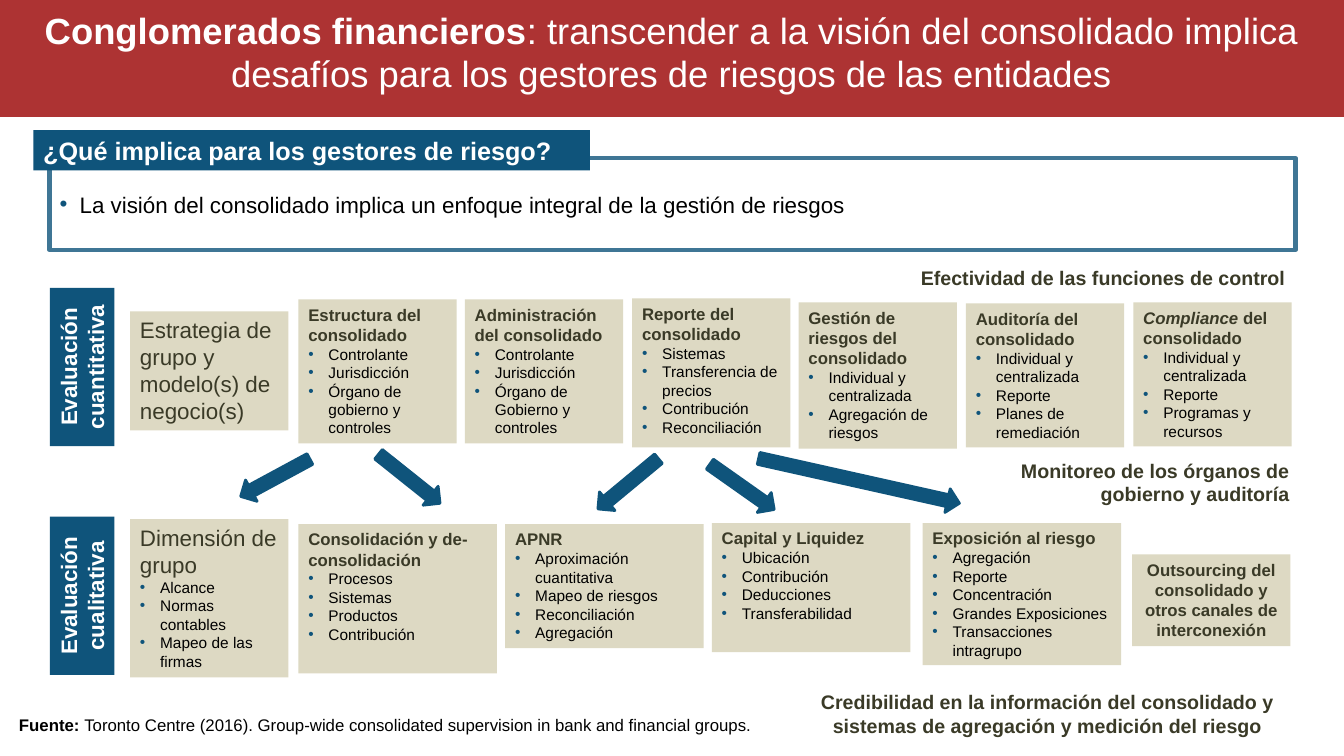
from dataclasses import dataclass

from lxml.etree import SubElement
from pptx import Presentation
from pptx.dml.color import RGBColor
from pptx.enum.shapes import MSO_SHAPE
from pptx.enum.text import MSO_ANCHOR, MSO_AUTO_SIZE, PP_ALIGN
from pptx.oxml.ns import qn
from pptx.util import Emu, Pt


@dataclass(frozen=True)
class Theme:
    """Colours, font and type sizes of the slide."""
    font: str = "Arial"
    red: str = "AD3333"
    blue: str = "0F547B"
    frame: str = "3F7695"
    sand: str = "DDD9C3"
    olive: str = "3A3A27"
    black: str = "000000"
    white: str = "FFFFFF"
    title: int = 26
    section: int = 18
    lead: int = 16
    note: int = 14
    heading: int = 12
    bullet: int = 11


THEME = Theme()
EMU_PER_PX = 9144
CARD_WIDTH = 157
WIDE_CARD_WIDTH = 197
BULLET_INDENT = 20

ARROWS = [
    ((261, 435, 24, 78), 61.6),
    ((394, 436, 24, 78), 308.6),
    ((611, 441, 24, 78), 50.3),
    ((724, 444, 24, 78), 305.2),
    ((840, 375, 24, 204), 282.6),
]
QUANTITATIVE_CARDS = [
    (297, 143, [("Estructura del consolidado", False)],
     ["Controlante", "Jurisdicción", "Órgano de gobierno y controles"]),
    (297, 143, [("Administración del consolidado", False)],
     ["Controlante", "Jurisdicción", "Órgano de Gobierno y controles"]),
    (296, 148, [("Reporte del consolidado", False)],
     ["Sistemas", "Transferencia de precios", "Contribución", "Reconciliación"]),
    (300, 145, [("Gestión de riesgos del consolidado", False)],
     ["Individual y centralizada", "Agregación de riesgos"]),
    (301, 143, [("Auditoría del consolidado", False)],
     ["Individual y centralizada", "Reporte", "Planes de remediación"]),
    (300, 143, [("Compliance", True), (" del consolidado", False)],
     ["Individual y centralizada", "Reporte", "Programas y recursos"]),
]
QUALITATIVE_CARDS = [
    (296, 520, 148, "Consolidación y de-consolidación",
     ["Procesos", "Sistemas", "Productos", "Contribución"]),
    (501, 520, 123, "APNR",
     ["Aproximación cuantitativa", "Mapeo de riesgos", "Reconciliación", "Agregación"]),
    (706, 519, 128, "Capital y Liquidez",
     ["Ubicación", "Contribución", "Deducciones", "Transferabilidad"]),
    (915, 519, 141, "Exposición al riesgo",
     ["Agregación", "Reporte", "Concentración", "Grandes Exposiciones",
      "Transacciones intragrupo"]),
]


def px(length):
    """Turn a length in px into EMU."""
    return Emu(length * EMU_PER_PX)


def color(value):
    """Turn a hexadecimal string into a colour."""
    return RGBColor.from_string(value)


def move(shape, box):
    """Place a shape in a box of left, top, width and height."""
    shape.left, shape.top, shape.width, shape.height = map(px, box)


def write(paragraph, text, size, ink, bold=False, italic=False):
    """Add one formatted run to a paragraph."""
    run = paragraph.add_run()
    run.text = text
    font = run.font
    font.name, font.size, font.bold, font.italic = THEME.font, Pt(size), bold, italic
    font.color.rgb = color(ink)


def write_bullet(paragraph, text, size):
    """Make a paragraph a bulleted line of text."""
    properties = paragraph._p.get_or_add_pPr()
    properties.set("marL", str(px(BULLET_INDENT)))
    properties.set("indent", str(-px(BULLET_INDENT)))
    bullet_color = SubElement(properties, qn("a:buClr"))
    SubElement(bullet_color, qn("a:srgbClr"), val=THEME.blue)
    SubElement(properties, qn("a:buFont"), typeface=THEME.font)
    SubElement(properties, qn("a:buChar"), char="•")
    paragraph.space_before = Pt(0)
    write(paragraph, text, size, THEME.black)


def setup_frame(shape, anchor=MSO_ANCHOR.TOP, alignment=PP_ALIGN.LEFT):
    """Prepare the text frame of a shape and return its first paragraph."""
    frame = shape.text_frame
    frame.word_wrap = True
    frame.auto_size = MSO_AUTO_SIZE.NONE
    frame.vertical_anchor = anchor
    paragraph = frame.paragraphs[0]
    paragraph.alignment = alignment
    return paragraph


def add_filled(slide, kind, box, fill):
    """Add a filled shape without outline or shadow."""
    shape = slide.shapes.add_shape(kind, *map(px, box))
    shape.shadow.inherit = False
    shape.fill.solid()
    shape.fill.fore_color.rgb = color(fill)
    shape.line.fill.background()
    return shape


def add_block(slide, box, fill, text, size, ink, bold=True, alignment=PP_ALIGN.LEFT):
    """Add a filled rectangle with one paragraph of text."""
    block = add_filled(slide, MSO_SHAPE.RECTANGLE, box, fill)
    write(setup_frame(block, alignment=alignment), text, size, ink, bold)
    return block


def add_card(slide, box, heading, bullets, size=THEME.heading, bold=True):
    """Add a sand card with a heading and a bulleted list."""
    card = add_filled(slide, MSO_SHAPE.RECTANGLE, box, THEME.sand)
    paragraph = setup_frame(card)
    for text, italic in heading:
        write(paragraph, text, size, THEME.olive, bold, italic)
    for text in bullets:
        paragraph = card.text_frame.add_paragraph()
        paragraph.alignment = PP_ALIGN.LEFT
        write_bullet(paragraph, text, THEME.bullet)


def add_note(slide, box, runs, size, ink, alignment):
    """Add a free text box made of runs."""
    note = slide.shapes.add_textbox(*map(px, box))
    paragraph = setup_frame(note, alignment=alignment)
    for text, bold in runs:
        write(paragraph, text, size, ink, bold)


def fill_title(slide, box):
    """Fill the title placeholder as a red band."""
    title = slide.shapes.title
    move(title, box)
    title.fill.solid()
    title.fill.fore_color.rgb = color(THEME.red)
    paragraph = setup_frame(title, MSO_ANCHOR.MIDDLE, PP_ALIGN.CENTER)
    title.text_frame.margin_bottom = px(19)
    write(paragraph, "Conglomerados financieros", THEME.title, THEME.white, True)
    write(paragraph, ": transcender a la visión del consolidado implica desafíos para "
          "los gestores de riesgos de las entidades", THEME.title, THEME.white)


def fill_question(slide, box):
    """Fill the body placeholder as a framed list with its header."""
    left, top, _, _ = box
    body = slide.placeholders[1]
    move(body, box)
    body.line.color.rgb = color(THEME.frame)
    body.line.width = Pt(3)
    write_bullet(setup_frame(body, MSO_ANCHOR.MIDDLE),
                 "La visión del consolidado implica un enfoque integral de la gestión de riesgos",
                 THEME.lead)
    add_block(slide, (left - 16, top - 28, 552, 40), THEME.blue,
              "¿Qué implica para los gestores de riesgo?", THEME.section, THEME.white)


def add_row_label(slide, box, text):
    """Add a blue row label that reads upwards."""
    label = add_block(slide, box, THEME.blue, text, THEME.lead, THEME.white,
                      alignment=PP_ALIGN.CENTER)
    label.rotation = 270


def add_arrows(slide):
    """Add the arrows that lead from the upper row to the lower one."""
    for box, angle in ARROWS:
        arrow = add_filled(slide, MSO_SHAPE.DOWN_ARROW, box, THEME.blue)
        arrow.line.color.rgb = color(THEME.blue)
        arrow.line.width = Pt(2)
        arrow.rotation = angle


def add_quantitative_row(slide, left, top):
    """Add the label and cards of the quantitative row."""
    add_row_label(slide, (left - 126, top + 23, CARD_WIDTH, 64), "Evaluación cuantitativa")
    add_block(slide, (left, top, CARD_WIDTH, 118), THEME.sand,
              "Estrategia de grupo y modelo(s) de negocio(s)", THEME.lead, THEME.olive, False)
    for index, (card_top, height, heading, bullets) in enumerate(QUANTITATIVE_CARDS):
        card_left = left + 167 + index * 828 // 5
        add_card(slide, (card_left, card_top, CARD_WIDTH, height), heading, bullets)


def add_qualitative_row(slide, left, top):
    """Add the label and cards of the qualitative row."""
    add_row_label(slide, (left - 126, top + 44, CARD_WIDTH, 64), "Evaluación cualitativa")
    add_card(slide, (left, top, CARD_WIDTH, 157), [("Dimensión de grupo", False)],
             ["Alcance", "Normas contables", "Mapeo de las firmas"], THEME.lead, False)
    for card_left, card_top, height, heading, bullets in QUALITATIVE_CARDS:
        add_card(slide, (card_left, card_top, WIDE_CARD_WIDTH, height),
                 [(heading, False)], bullets)
    add_block(slide, (left + 994, top + 35, CARD_WIDTH, 91), THEME.sand,
              "Outsourcing del consolidado y otros canales de interconexión",
              THEME.heading, THEME.olive, alignment=PP_ALIGN.CENTER)


def add_notes(slide):
    """Add the free remarks and the source line."""
    remarks = [
        ((690, 259, 595, 34), "Efectividad de las funciones de control", PP_ALIGN.RIGHT),
        ((952, 450, 337, 57), "Monitoreo de los órganos de gobierno y auditoría",
         PP_ALIGN.RIGHT),
        ((797, 680, 484, 57), "Credibilidad en la información del consolidado y sistemas "
         "de agregación y medición del riesgo", PP_ALIGN.CENTER),
    ]
    for box, text, alignment in remarks:
        add_note(slide, box, [(text, True)], THEME.note, THEME.olive, alignment)
    add_note(slide, (9, 704, 766, 30),
             [("Fuente: ", True), ("Toronto Centre (2016). Group-wide consolidated "
                                   "supervision in bank and financial groups.", False)],
             THEME.heading, THEME.black, PP_ALIGN.LEFT)


def main():
    """Build the slide and save it."""
    presentation = Presentation()
    presentation.slide_width, presentation.slide_height = px(1333), px(750)
    slide = presentation.slides.add_slide(presentation.slide_layouts[1])
    fill_title(slide, (0, 0, 1333, 116))
    fill_question(slide, (49, 157, 1236, 91))
    add_arrows(slide)
    add_quantitative_row(slide, 129, 309)
    add_qualitative_row(slide, 129, 515)
    add_notes(slide)
    presentation.save("out.pptx")


if __name__ == "__main__":
    main()
